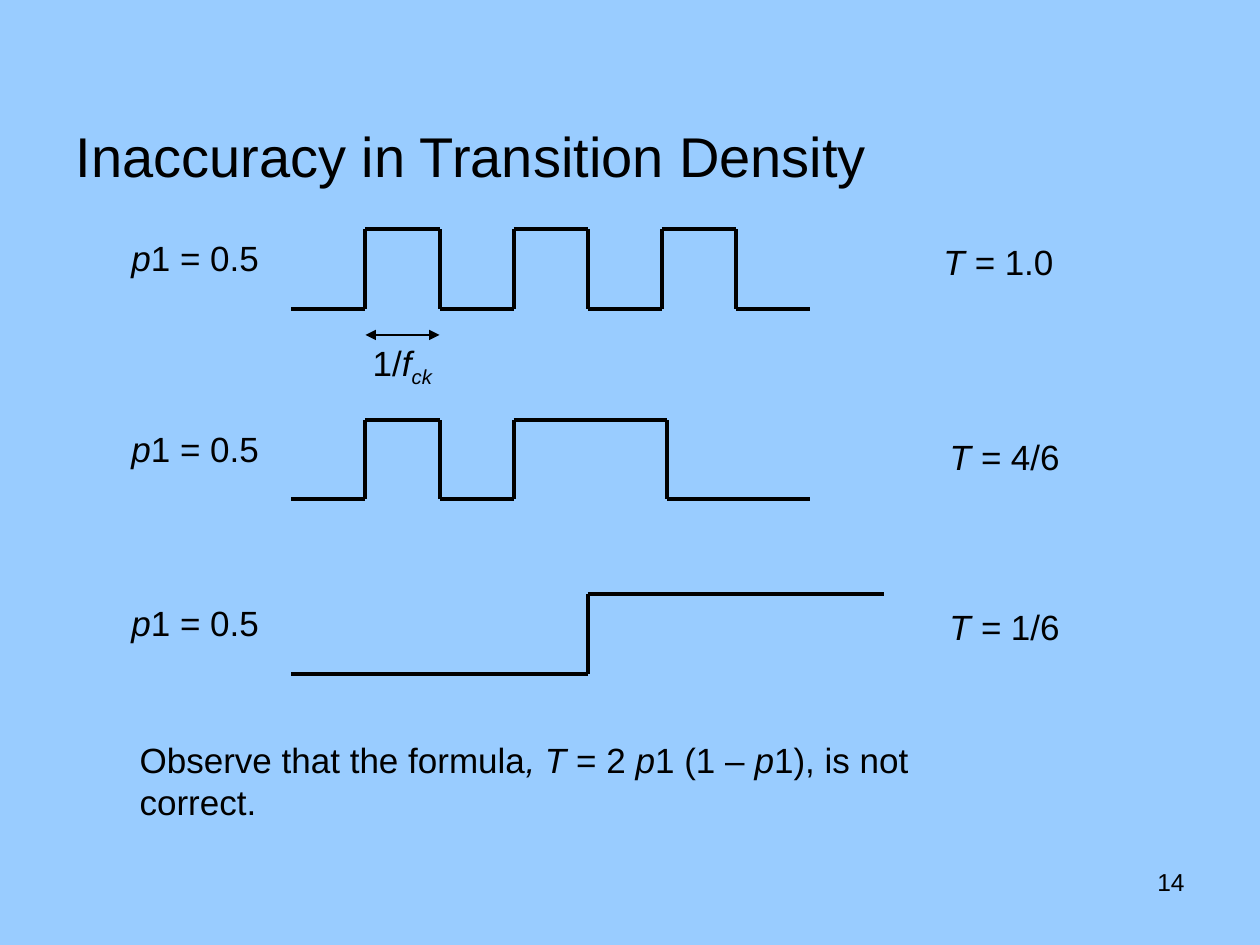
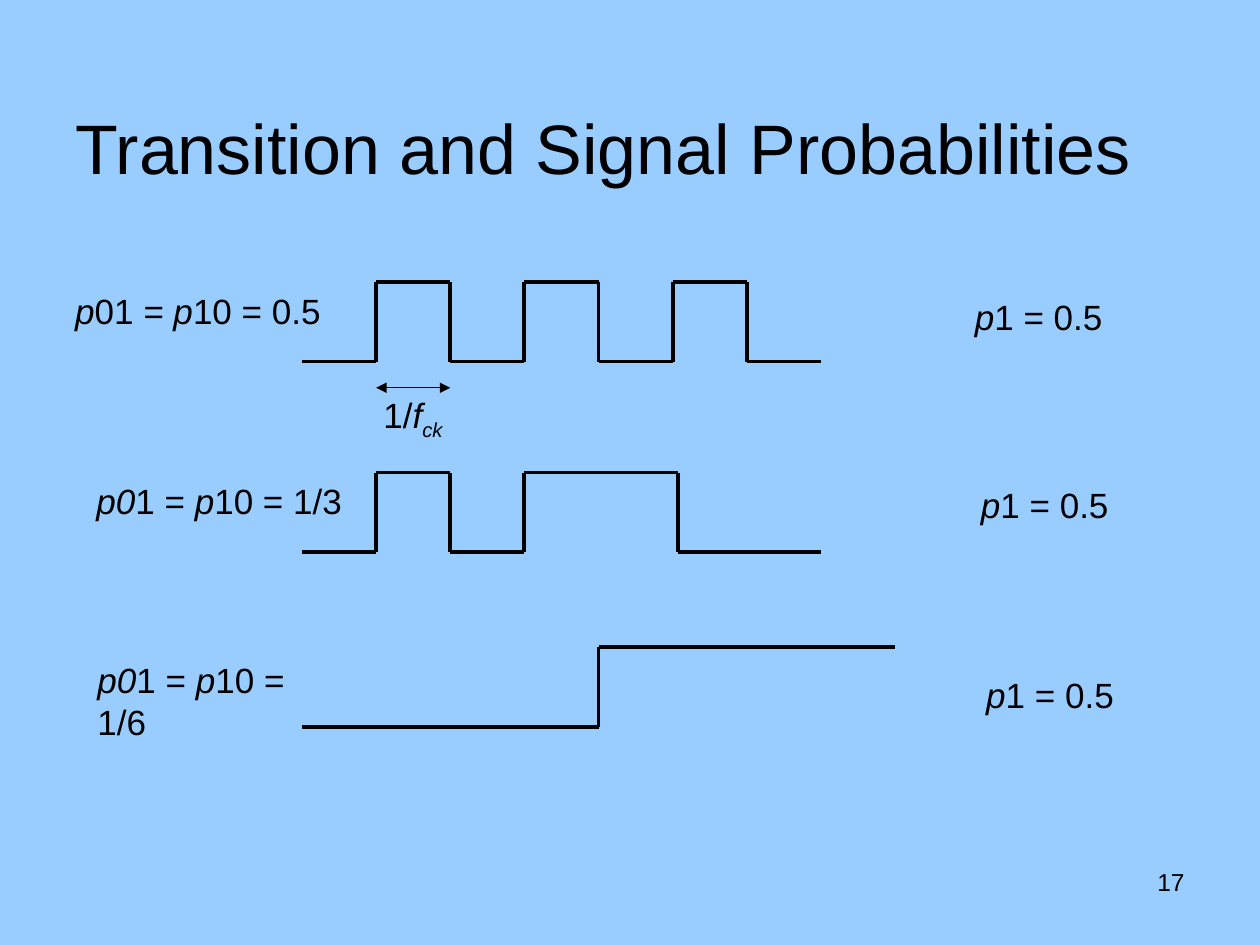
from itertools import pairwise

from lxml.etree import SubElement
from pptx import Presentation
from pptx.dml.color import RGBColor
from pptx.enum.shapes import MSO_CONNECTOR
from pptx.enum.text import MSO_ANCHOR, MSO_AUTO_SIZE, PP_ALIGN
from pptx.oxml.ns import qn
from pptx.util import Pt

FONT = "Arial"
SKY, INK = "99CCFF", "000000"
PERIOD, SWING = 42.35, 45.4
ROW_TOPS = (0, 108.8, 208.6)
CLOCK_DROP = 60.4
WAVES = ((0, 1, 2, 3, 4, 5, 6, 7), (0, 1, 2, 3, 5.07, 7), (0, 4, 8))


def color(value):
    """Turn a hex string into a colour."""
    return RGBColor.from_string(value)


def style(p, size, align=PP_ALIGN.LEFT):
    """Give a paragraph the shared font and ink."""
    p.alignment = align
    p.font.name = FONT
    p.font.size = Pt(size)
    p.font.color.rgb = color(INK)


def add_run(p, text, italic, subscript=False):
    """Append a run, optionally italic or lowered."""
    if not text:
        return
    r = p.add_run()
    r.text = text
    if italic:
        r.font.italic = True
    if subscript:
        r._r.get_or_add_rPr().set("baseline", "-25000")


def add_text(slide, box, text, size=20, align=PP_ALIGN.LEFT):
    """Add text in which *stars* mark italics and _ starts a subscript."""
    tf = slide.shapes.add_textbox(*map(Pt, box)).text_frame
    tf.word_wrap = True
    p = tf.paragraphs[0]
    for i, part in enumerate(text.split("*")):
        base, _, sub = part.partition("_")
        add_run(p, base, i % 2 == 1)
        add_run(p, sub, i % 2 == 1, subscript=True)
    style(p, size, align)


def add_line(slide, x1, y1, x2, y2, width=2.25, arrows=False):
    """Draw a straight line, optionally with an arrowhead at each end."""
    sp = slide.shapes.add_connector(MSO_CONNECTOR.STRAIGHT, *map(Pt, (x1, y1, x2, y2)))
    sp.line.color.rgb = color(INK)
    sp.line.width = Pt(width)
    if arrows:
        ln = sp.line._get_or_add_ln()
        for end in ("a:headEnd", "a:tailEnd"):
            SubElement(ln, qn(end), type="triangle")
    SubElement(sp._element.spPr, qn("a:effectLst"))


def add_wave(slide, left, top, edges):
    """Draw a signal that starts low and toggles at each inner edge."""
    xs = [left + PERIOD * edge for edge in edges]
    low = top + SWING
    for i, (start, end) in enumerate(pairwise(xs)):
        level = top if i % 2 else low
        add_line(slide, start, level, end, level)
    for x in xs[1:-1]:
        add_line(slide, x, low, x, top)


def add_clock_period(slide, left, top):
    """Mark one clock period with a double arrow and its label."""
    add_line(slide, left, top, left + PERIOD, top, width=0.75, arrows=True)
    add_text(slide, (left - 3, top, 73, 31), "1/*f_ck*")


def add_waveforms(slide, left, top, labels):
    """Place three signals, each with labels offset from its row top."""
    for row_top, edges, row_labels in zip(ROW_TOPS, WAVES, labels):
        y = top + row_top
        add_wave(slide, left, y, edges)
        for x, drop, width, text in row_labels:
            add_text(slide, (x, y + drop, width, 31), text)
    add_clock_period(slide, left + PERIOD, top + CLOCK_DROP)


def set_up_master(prs):
    """Set the shared background and title box and return the layout."""
    fill = prs.slide_master.background.fill
    fill.solid()
    fill.fore_color.rgb = color(SKY)
    layout = prs.slide_layouts[5]
    title = layout.placeholders[0]
    title.left, title.top, title.width, title.height = map(Pt, (36, 21.6, 648, 90))
    title.text_frame.vertical_anchor = MSO_ANCHOR.BOTTOM
    title.text_frame.auto_size = MSO_AUTO_SIZE.NONE
    return layout


def add_slide(prs, layout, title, size, number):
    """Add a slide with its title and page number."""
    slide = prs.slides.add_slide(layout)
    slide.shapes.title.text = title
    style(slide.shapes.title.text_frame.paragraphs[0], size)
    add_text(slide, (516, 492, 168, 37.5), number, 14, PP_ALIGN.RIGHT)
    return slide


def build_inaccuracy(prs, layout):
    """Build the slide on transition density."""
    slide = add_slide(prs, layout, "Inaccuracy in Transition Density", 32, "14")
    signal = (68, 0.7, 93, "*p*1 = 0.5")
    add_waveforms(slide, 166.5, 131, (
        (signal, (532, 2.9, 139, "*T = *1.0")),
        (signal, (535.5, 5.8, 157, "*T = *4/6")),
        (signal, (535.5, 2.9, 130, "*T = *1/6")),
    ))
    add_text(slide, (72.7, 418.3, 524, 55),
             "Observe that the formula*, T* = 2 *p*1 (1 – *p*1), is not correct.")


def build_probabilities(prs, layout):
    """Build the slide on transition and signal probabilities."""
    slide = add_slide(prs, layout, "Transition and Signal Probabilities", 40, "17")
    signal = "*p*1 = 0.5"
    add_waveforms(slide, 172.6, 161.2, (
        ((35.8, 0.7, 170, "*p*01* = p*10 = 0.5"), (550, 4.3, 133, signal)),
        ((48, 0.7, 165, "*p0*1 = *p*10 = 1/3"), (553.5, 2.9, 100, signal)),
        ((48.6, 2.9, 150, "*p0*1 = *p*10 = 1/6"), (556.5, 11.5, 100, signal)),
    ))


def main():
    """Build the presentation and save it."""
    prs = Presentation()
    prs.slide_width, prs.slide_height = Pt(720), Pt(540)
    layout = set_up_master(prs)
    build_inaccuracy(prs, layout)
    build_probabilities(prs, layout)
    prs.save("out.pptx")


if __name__ == "__main__":
    main()
